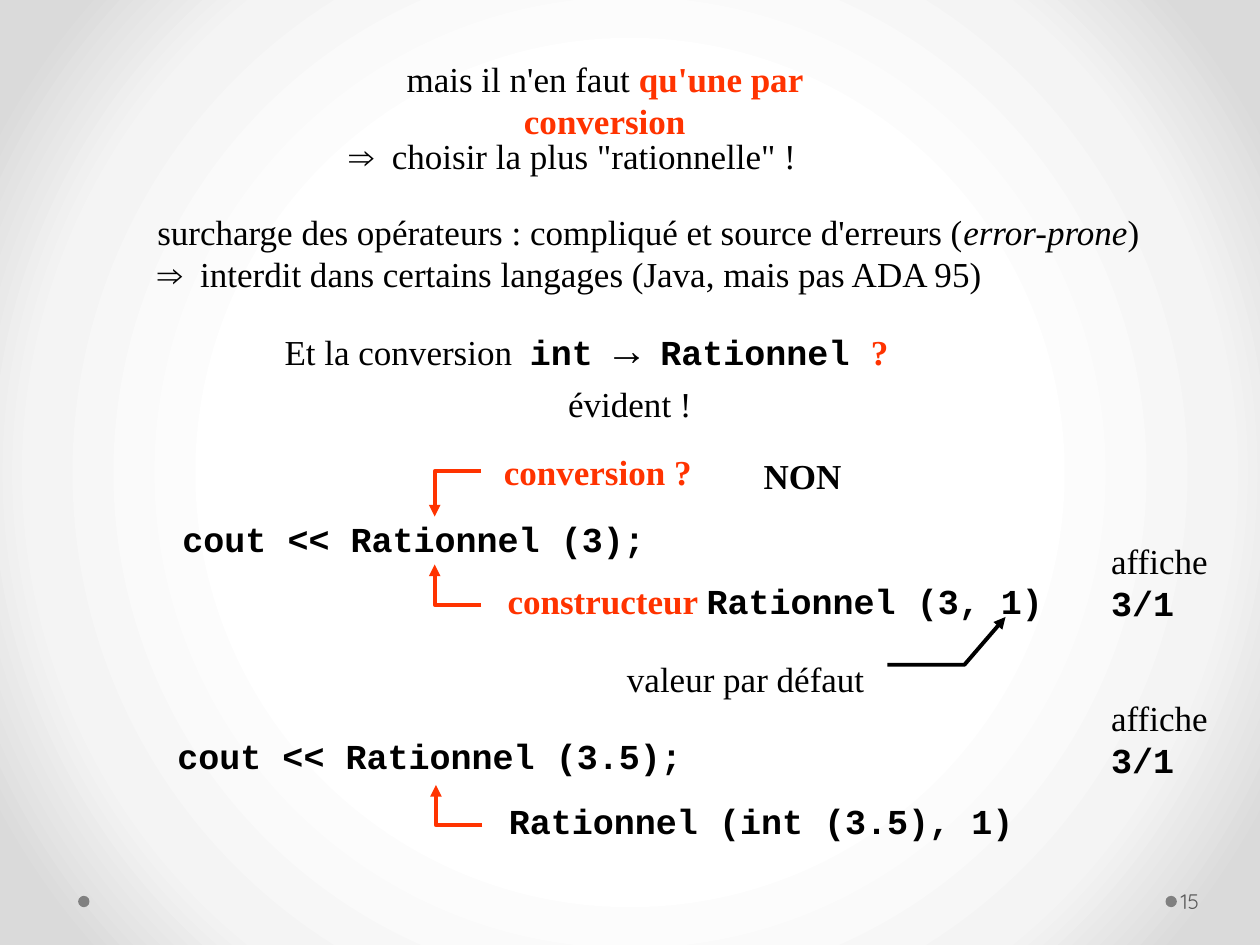
from lxml import etree
from pptx import Presentation
from pptx.dml.color import RGBColor
from pptx.enum.shapes import MSO_SHAPE
from pptx.enum.text import MSO_ANCHOR, MSO_AUTO_SIZE, PP_ALIGN
from pptx.oxml import parse_xml
from pptx.oxml.ns import nsdecls, qn
from pptx.util import Inches, Pt

LEFT, CENTER, RIGHT = PP_ALIGN.LEFT, PP_ALIGN.CENTER, PP_ALIGN.RIGHT
TOP, MIDDLE = MSO_ANCHOR.TOP, MSO_ANCHOR.MIDDLE

COLORS = {"black": "000000", "red": "FF3300", "white": "FFFFFF",
          "dot": "808080", "number": "595959"}
GRADIENT = [(50, "FFFFFF"), (76, "F4F4F4"), (92, "DADADA")]
SERIF, MONO = "Times New Roman", "Courier New"

# style: font, size, color, bold, italic
STYLES = {
    "text": (SERIF, 20, "black", False, False),
    "italic": (SERIF, 20, "black", False, True),
    "bold": (SERIF, 20, "black", True, False),
    "alert": (SERIF, 20, "red", True, False),
    "code": (MONO, 20, "black", True, False),
    "arrow": (MONO, 24, "black", False, False),
    "number": ("Quicksand", 12, "number", False, False),
}

# A paragraph is a list of (text, style) runs
TITLE = [[("mais il n'en faut ", "text"), ("qu'une par conversion", "alert")]]
PRINTED = [[("affiche", "text")], [("3/1", "code")]]
DEFAULT_VALUE = [[("valeur par défaut", "text")]]

# (left, top, width, height), alignment, anchor, paragraphs
TEXTS = [
    ((2.64, 1.02, 3.81, 0.43), CENTER, TOP,
     [[("⇒  choisir la plus \"rationnelle\" !", "text")]]),
    ((1.15, 1.62, 8, 0.77), LEFT, TOP,
     [[("surcharge des opérateurs : compliqué et source d'erreurs (", "text"),
       ("error-prone", "italic"), (")", "text")],
      [("⇒  interdit dans certains langages (Java, mais pas ADA 95)", "text")]]),
    ((2.16, 2.52, 5.28, 0.5), LEFT, TOP,
     [[("Et la conversion  ", "text"), ("int ", "code"), ("→", "arrow"),
       (" Rationnel ", "code"), ("?", "alert")]]),
    ((4.41, 2.99, 1.18, 0.43), CENTER, MIDDLE, [[("évident !", "text")]]),
    ((1.27, 4.06, 4.03, 0.43), CENTER, MIDDLE,
     [[("cout << Rationnel (3);", "code")]]),
    ((5.96, 3.56, 0.82, 0.43), CENTER, MIDDLE, [[("NON", "bold")]]),
    ((1.31, 5.78, 4.37, 0.43), LEFT, MIDDLE,
     [[("cout << Rationnel (3.5);", "code")]]),
    ((8.72, 4.23, 0.97, 0.77), LEFT, MIDDLE, PRINTED),
    ((8.72, 5.48, 0.97, 0.77), LEFT, MIDDLE, PRINTED),
]

# Label box, paragraphs, elbow corner, signed rise of the arrow tip
NOTES = [
    ((3.9, 3.53, 1.69, 0.43), [[("conversion ?", "alert")]], (3.45, 3.74), 0.36),
    ((3.93, 4.55, 4.61, 0.43),
     [[("constructeur ", "alert"), ("Rationnel (3, 1)", "code")]],
     (3.45, 4.8), -0.32),
    ((3.94, 6.3, 4.37, 0.43), [[("Rationnel (int (3.5), 1)", "code")]],
     (3.46, 6.55), -0.32),
]
ELBOW_WIDTH = 0.37
CALLOUT_BOX = (4.85, 5.15, 2.11, 0.47)
CALLOUT_POINTS = [0.269, 1.039, 0.269, 1.329, -0.539, 1.484]
DOTS = [(0.62, 7.11), (9.25, 7.11)]


def rgb(name):
    return RGBColor.from_string(COLORS[name])


def inches(values):
    return [Inches(v) for v in values]


def write(shape, paragraphs, align, anchor, wrap=False):
    tf = shape.text_frame
    tf.word_wrap = wrap
    tf.auto_size = MSO_AUTO_SIZE.NONE if wrap else MSO_AUTO_SIZE.SHAPE_TO_FIT_TEXT
    tf.vertical_anchor = anchor
    for i, runs in enumerate(paragraphs):
        p = tf.paragraphs[0] if i == 0 else tf.add_paragraph()
        p.alignment = align
        for text, style in runs:
            r = p.add_run()
            r.text = text
            font, size, color, bold, italic = STYLES[style]
            r.font.name, r.font.size = font, Pt(size)
            r.font.bold, r.font.italic = bold, italic
            r.font.color.rgb = rgb(color)


def add_text(shapes, box, paragraphs, align, anchor):
    tb = shapes.add_textbox(*inches(box))
    write(tb, paragraphs, align, anchor)
    return tb


def arrow_line(shape, color):
    shape.shadow.inherit = False
    shape.line.color.rgb = rgb(color)
    shape.line.width = Pt(2.25)
    ln = shape.line._get_or_add_ln()
    etree.SubElement(ln, qn("a:tailEnd"), type="triangle")


def add_note(s, box, paragraphs, corner, rise):
    """Group a label with the elbow arrow leading from it to the code."""
    group = s.shapes.add_group_shape()
    add_text(group.shapes, box, paragraphs, LEFT, MIDDLE)
    x, y = corner
    builder = group.shapes.build_freeform(Inches(x + ELBOW_WIDTH), Inches(y))
    builder.add_line_segments([inches(corner), inches((x, y + rise))], close=False)
    elbow = builder.convert_to_shape()
    elbow.fill.background()
    arrow_line(elbow, "red")


def set_background(s):
    stops = "".join(f'<a:gs pos="{pos * 1000}"><a:srgbClr val="{color}"/></a:gs>'
                    for pos, color in GRADIENT)
    s.element.cSld.insert(0, parse_xml(
        f'<p:bg {nsdecls("p", "a")}><p:bgPr><a:gradFill rotWithShape="1">'
        f'<a:gsLst>{stops}</a:gsLst><a:path path="circle">'
        '<a:fillToRect l="50000" t="50000" r="50000" b="50000"/></a:path>'
        '</a:gradFill><a:effectLst/></p:bgPr></p:bg>'))


def main():
    prs = Presentation()
    prs.slide_width, prs.slide_height = Inches(10), Inches(7.5)
    s = prs.slides.add_slide(prs.slide_layouts[5])
    set_background(s)

    title = s.shapes.title
    title.left, title.top, title.width, title.height = inches((2.5, 0.41, 4.6, 0.8))
    write(title, TITLE, CENTER, TOP, wrap=True)

    for x, y in DOTS:
        dot = s.shapes.add_shape(MSO_SHAPE.OVAL, *inches((x, y, 0.09, 0.09)))
        dot.shadow.inherit = False
        dot.fill.solid()
        dot.fill.fore_color.rgb = rgb("dot")
        dot.line.fill.background()
    number = add_text(s.shapes, (9.34, 6.95, 0.61, 0.4),
                      [[("15", "number")]], LEFT, MIDDLE)
    number.text_frame.word_wrap = True
    number.text_frame.auto_size = MSO_AUTO_SIZE.NONE
    number.text_frame.margin_left = Inches(0.03)

    for box, align, anchor, paragraphs in TEXTS:
        add_text(s.shapes, box, paragraphs, align, anchor)
    for note in NOTES:
        add_note(s, *note)

    callout = s.shapes.add_shape(MSO_SHAPE.LINE_CALLOUT_2_NO_BORDER,
                                 *inches(CALLOUT_BOX))
    for i, value in enumerate(CALLOUT_POINTS):
        callout.adjustments[i] = value
    callout.fill.solid()
    callout.fill.fore_color.rgb = rgb("white")
    arrow_line(callout, "black")
    write(callout, DEFAULT_VALUE, RIGHT, MIDDLE)

    prs.save("out.pptx")


if __name__ == "__main__":
    main()
